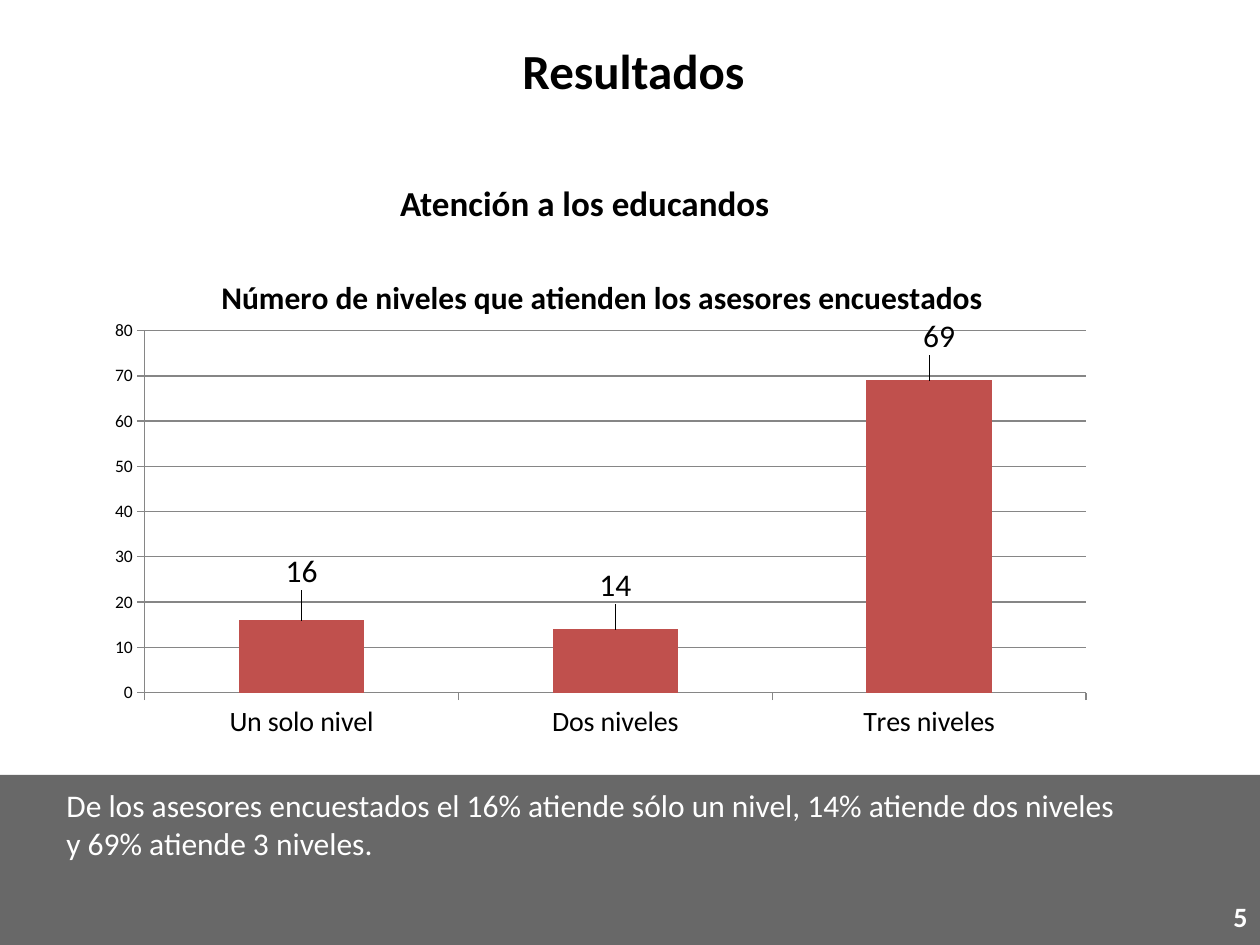
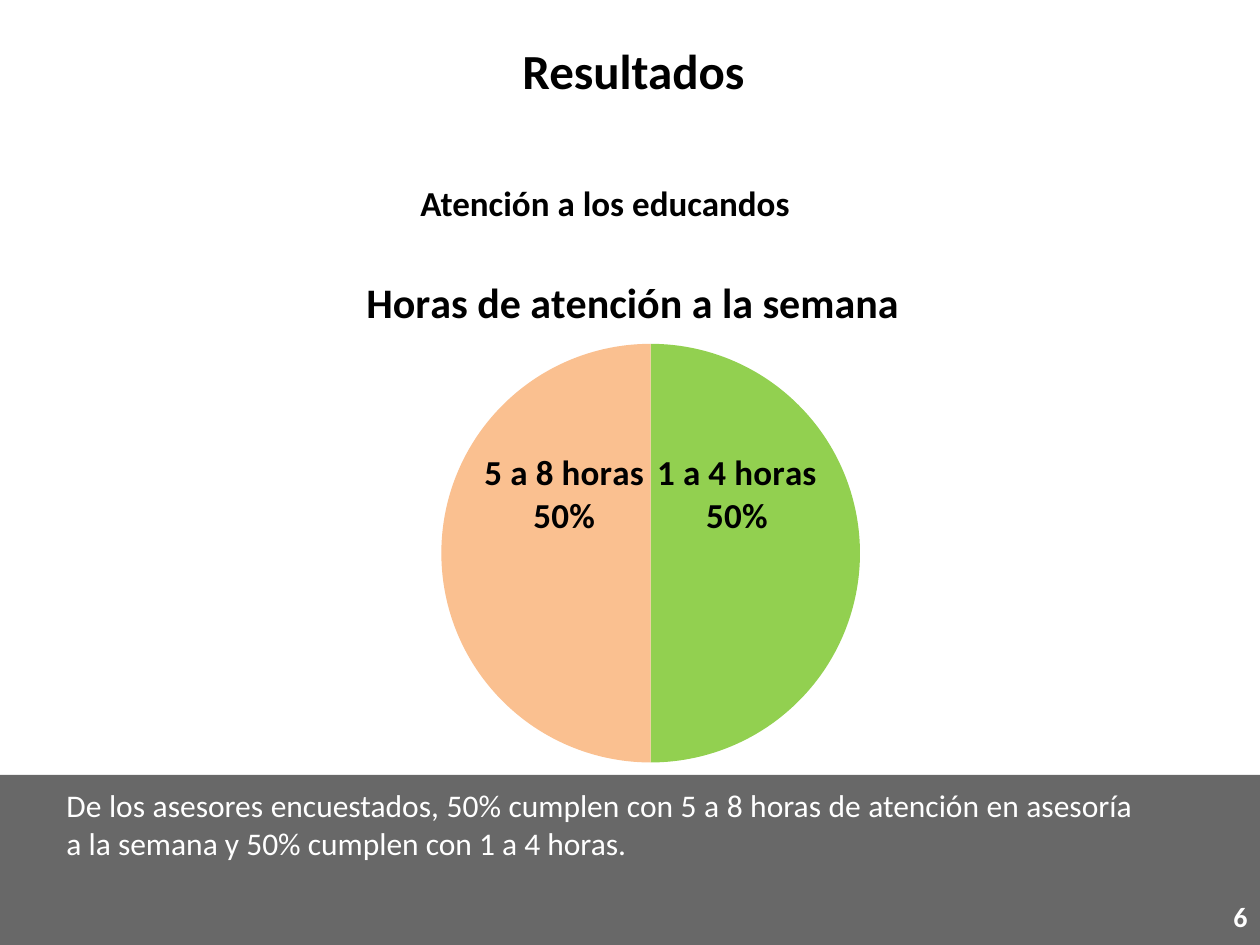
from lxml import etree
from pptx import Presentation
from pptx.chart.data import CategoryChartData
from pptx.dml.color import RGBColor
from pptx.enum import chart as charts, shapes, text
from pptx.oxml.ns import qn
from pptx.util import Cm, Pt

FONT = "Calibri"
COLORS = {
    "ink": "000000",
    "paper": "FFFFFF",
    "band": "686868",
    "grid": "868686",
    "bar": "C0504D",
    "short_hours": "92D050",
    "long_hours": "FAC090",
}
PAGE_WIDTH, PAGE_HEIGHT = 25.4, 19.05
BAND_TOP = 15.62


def color(name):
    return RGBColor.from_string(COLORS[name])


def style_font(font, size, name="ink", bold=False):
    font.name = FONT
    font.size = Pt(size)
    font.bold = bold
    font.color.rgb = color(name)


def fill_text(box, wording, size, name="ink", bold=False, align=text.PP_ALIGN.LEFT,
              anchor=text.MSO_ANCHOR.TOP):
    frame = box.text_frame
    frame.word_wrap = True
    frame.vertical_anchor = anchor
    para = frame.paragraphs[0]
    para.text = wording
    para.alignment = align
    style_font(para.font, size, name, bold)


def add_text(page, area, wording, size, **style):
    box = page.shapes.add_textbox(*map(Cm, area))
    fill_text(box, wording, size, **style)


def add_band(page):
    band = page.shapes.add_shape(shapes.MSO_SHAPE.RECTANGLE, 0, Cm(BAND_TOP),
                                 Cm(PAGE_WIDTH), Cm(PAGE_HEIGHT - BAND_TOP))
    band.shadow.inherit = False
    band.fill.solid()
    band.fill.fore_color.rgb = color("band")
    band.line.fill.background()


def add_result_page(deck, number, subtitle_left, finding, align):
    """Add a slide with title, subtitle, grey band, finding and page number."""
    page = deck.slides.add_slide(deck.slide_layouts[5])
    title = page.shapes.title
    title.left, title.top, title.width, title.height = map(Cm, (8.97, 0.71, 7.6, 1.4))
    fill_text(title, "Resultados", 28, bold=True, align=text.PP_ALIGN.CENTER,
              anchor=text.MSO_ANCHOR.MIDDLE)
    add_band(page)
    add_text(page, (subtitle_left, 3.53, 21.4, 1.12), "Atención a los educandos", 20,
             bold=True, align=text.PP_ALIGN.CENTER)
    add_text(page, (1.09, 15.72, 22, 1.8), finding, 18, name="paper", align=align)
    add_text(page, (19.48, 17.96, 5.92, 1.02), str(number), 16, name="paper", bold=True,
             align=text.PP_ALIGN.RIGHT, anchor=text.MSO_ANCHOR.MIDDLE)
    return page


def set_layout(parent, index, **values):
    """Insert a manual chart layout as the given child of parent."""
    for old in parent.findall(qn("c:layout")):
        parent.remove(old)
    layout = etree.Element(qn("c:layout"))
    manual = etree.SubElement(layout, qn("c:manualLayout"))
    for tag, value in values.items():
        etree.SubElement(manual, qn(f"c:{tag}"), val=str(value))
    parent.insert(index, layout)


def add_chart(page, kind, area, values, title, title_size, title_at, plot_at):
    data = CategoryChartData(number_format="0")
    data.categories = list(values)
    data.add_series("Series 1", list(values.values()))
    chart = page.shapes.add_chart(kind, *map(Cm, area), data).chart
    chart.has_legend = False
    style_font(chart.font, 10)
    chart.has_title = True
    para = chart.chart_title.text_frame.paragraphs[0]
    para.text = title
    style_font(para.font, title_size, bold=True)
    edges = {"xMode": "edge", "yMode": "edge"}
    set_layout(chart.chart_title._element, 1, **edges, **dict(zip("xy", title_at)))
    plot_area = chart._chartSpace.chart.plotArea
    set_layout(plot_area, 0, layoutTarget="inner", **edges, **dict(zip("xywh", plot_at)))
    return chart


def label_points(series, shifts, position, size, bold=False, with_share=False):
    """Label each point, moved by a share of the chart's width and height."""
    for index, (x, y) in enumerate(shifts):
        label = series.points[index].data_label
        style_font(label.font, size, bold=bold)
        label.position = position
        node = series._element.xpath(f"c:dLbls/c:dLbl[c:idx/@val='{index}']")[0]
        set_layout(node, 1, x=x, y=y)
        if with_share:
            for tag, shown in (("showVal", 0), ("showCatName", 1), ("showPercent", 1)):
                node.find(qn(f"c:{tag}")).set("val", str(shown))
            etree.SubElement(node, qn("c:separator")).text = "\n"


def add_levels_chart(page):
    chart = add_chart(
        page, charts.XL_CHART_TYPE.COLUMN_CLUSTERED, (1.9, 4.93, 20.4, 10.21),
        {"Un solo nivel": 16, "Dos niveles": 14, "Tres niveles": 69},
        "Número de niveles que atienden los asesores encuestados", 18,
        (0.12, 0.05), (0.05, 0.17, 0.93, 0.715))
    plot = chart.plots[0]
    plot.gap_width = 150
    plot.vary_by_categories = False
    series = plot.series[0]
    series.format.fill.solid()
    series.format.fill.fore_color.rgb = color("bar")
    label_points(series, [(0, -0.05), (0, -0.04), (0.01, -0.04)],
                 charts.XL_LABEL_POSITION.OUTSIDE_END, 18)
    levels, scale = chart.category_axis, chart.value_axis
    scale.minimum_scale, scale.maximum_scale, scale.major_unit = 0, 80, 10
    scale.has_major_gridlines = True
    for axis, size in ((levels, 16), (scale, 10)):
        axis.major_tick_mark = charts.XL_TICK_MARK.OUTSIDE
        axis.format.line.color.rgb = color("grid")
        style_font(axis.tick_labels.font, size)
    scale.major_gridlines.format.line.color.rgb = color("grid")


def add_hours_chart(page):
    chart = add_chart(
        page, charts.XL_CHART_TYPE.PIE, (3.91, 4.95, 18.47, 10.77),
        {"1 a 4 horas": 50, "5 a 8 horas": 50},
        "Horas de atención a la semana", 24,
        (0.18, 0.04), (0.27, 0.184, 0.457, 0.784))
    series = chart.plots[0].series[0]
    for index, name in enumerate(("short_hours", "long_hours")):
        fill = series.points[index].format.fill
        fill.solid()
        fill.fore_color.rgb = color(name)
    label_points(series, [(-0.02, -0.11), (0.02, -0.11)],
                 charts.XL_LABEL_POSITION.CENTER, 20, bold=True, with_share=True)


def main():
    deck = Presentation()
    deck.slide_width, deck.slide_height = Cm(PAGE_WIDTH), Cm(PAGE_HEIGHT)
    levels_page = add_result_page(
        deck, 5, 1.09,
        "De los asesores encuestados el 16% atiende sólo un nivel, 14% atiende dos "
        "niveles y 69% atiende 3 niveles.", text.PP_ALIGN.LEFT)
    add_levels_chart(levels_page)
    hours_page = add_result_page(
        deck, 6, 1.5,
        "De los asesores encuestados, 50% cumplen con 5 a 8 horas de atención en "
        "asesoría a la semana y 50% cumplen con 1 a 4 horas.", text.PP_ALIGN.JUSTIFY)
    add_hours_chart(hours_page)
    deck.save("out.pptx")


if __name__ == "__main__":
    main()
